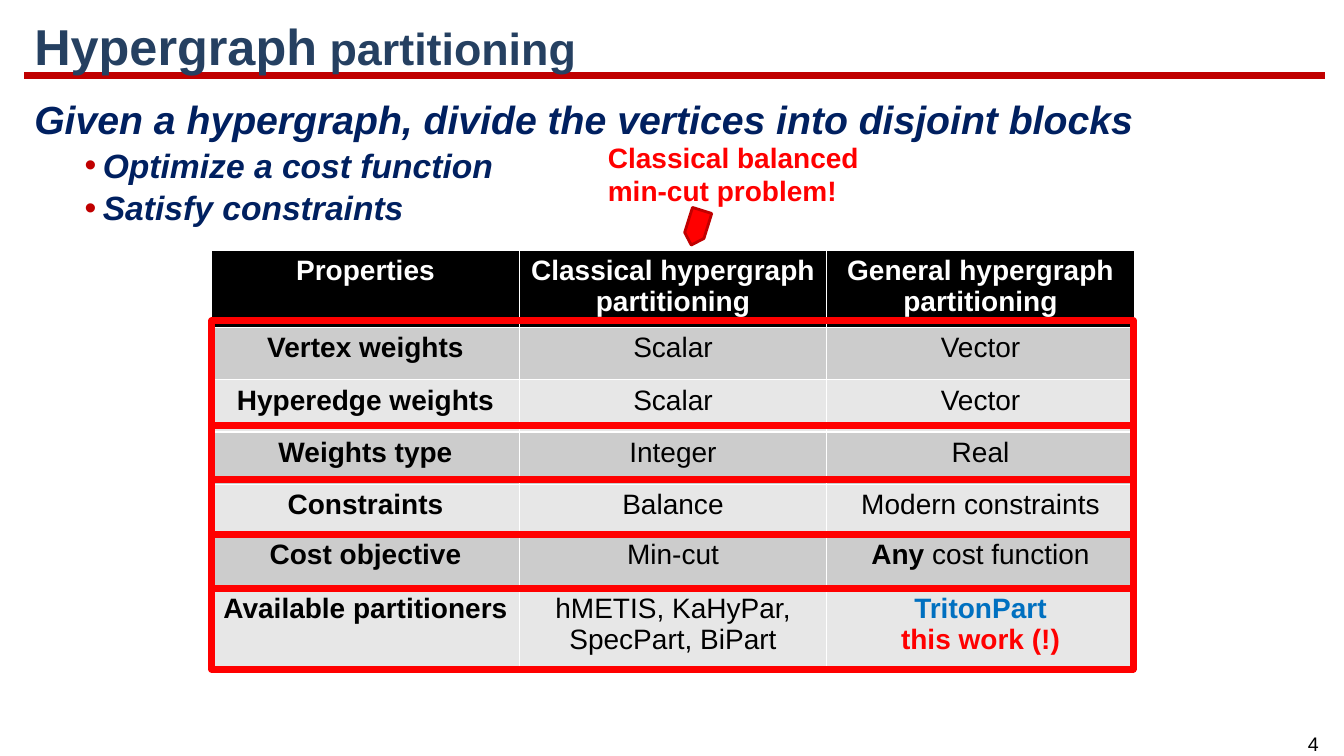
from itertools import accumulate

from lxml.etree import SubElement
from pptx import Presentation
from pptx.dml.color import RGBColor
from pptx.enum.shapes import MSO_CONNECTOR, MSO_SHAPE
from pptx.enum.text import MSO_ANCHOR, MSO_AUTO_SIZE, PP_ALIGN
from pptx.oxml.ns import qn
from pptx.util import Emu, Pt

BLACK = RGBColor(0x00, 0x00, 0x00)
WHITE = RGBColor(0xFF, 0xFF, 0xFF)
RED = RGBColor(0xFF, 0x00, 0x00)
DARK_RED = RGBColor(0xC0, 0x00, 0x00)
NAVY = RGBColor(0x00, 0x20, 0x60)
SLATE = RGBColor(0x25, 0x40, 0x61)
BLUE = RGBColor(0x00, 0x70, 0xC0)
BANDS = (RGBColor(0xE7, 0xE7, 0xE7), RGBColor(0xCC, 0xCC, 0xCC))

TABLE_LEFT, TABLE_TOP, COLUMN_WIDTH = 210, 248, 305
ROW_HEIGHTS = (74, 52, 52, 52, 49, 54, 83)
HIGHLIGHT_TOP, HIGHLIGHT_WIDTH = 318, 914
HIGHLIGHT_HEIGHTS = (104, 54, 54, 54, 80)
HEADERS = ("Properties", "Classical hypergraph partitioning", "General hypergraph partitioning")
PROPERTIES = (
    ("Vertex weights", "Scalar", "Vector"),
    ("Hyperedge weights", "Scalar", "Vector"),
    ("Weights type", "Integer", "Real"),
    ("Constraints", "Balance", "Modern constraints"),
    ("Cost objective", "Min-cut", [[("Any", BLACK, True), (" cost function", BLACK, False)]]),
    ("Available partitioners", "hMETIS, KaHyPar, SpecPart, BiPart",
     [[("TritonPart", BLUE, True)], [("this work (!)", RED, True)]]),
)


def px(length):
    """Turn px, a hundred to the inch, into EMU."""
    return Emu(length * 9144)


class SlideBuilder:
    font_name = "Arial"

    def __init__(self, presentation):
        self.slide = presentation.slides.add_slide(presentation.slide_layouts[1])
        self.shapes = self.slide.shapes

    def place(self, shape, left, top, width, height):
        shape.left, shape.top = px(left), px(top)
        shape.width, shape.height = px(width), px(height)

    def add_run(self, paragraph, text, size, color, bold=False, italic=False):
        run = paragraph.add_run()
        run.text = text
        font = run.font
        font.name, font.size, font.bold, font.italic = self.font_name, Pt(size), bold, italic
        font.color.rgb = color

    def header_rule(self, left, right, y):
        rule = self.shapes.add_connector(
            MSO_CONNECTOR.STRAIGHT, px(left), px(y), px(right), px(y))
        rule.line.color.rgb, rule.line.width = DARK_RED, Pt(4.5)
        element = rule.element
        SubElement(element.spPr, qn("a:effectLst"))
        element.getparent().insert(2, element)  # behind the title

    def title(self, box, runs):
        title = self.shapes.title
        self.place(title, *box)
        frame = title.text_frame
        frame.auto_size, frame.vertical_anchor = MSO_AUTO_SIZE.NONE, MSO_ANCHOR.MIDDLE
        paragraph = frame.paragraphs[0]
        paragraph.alignment, paragraph.line_spacing = PP_ALIGN.LEFT, 0.9
        for text, size in runs:
            self.add_run(paragraph, text, size, SLATE, bold=True)

    def body(self, box, lead, bullets):
        body = self.slide.placeholders[1]
        self.place(body, *box)
        frame = body.text_frame
        frame.auto_size = MSO_AUTO_SIZE.NONE
        paragraph = frame.paragraphs[0]
        self.set_bullet(paragraph, 0, 0, None)
        paragraph.space_before = Pt(0)
        self.add_run(paragraph, lead, 28, NAVY, bold=True, italic=True)
        for text in bullets:
            paragraph = frame.add_paragraph()
            paragraph.level = 1
            self.set_bullet(paragraph, 68, 18, "•")
            paragraph.space_before = Pt(1.5)
            self.add_run(paragraph, text, 24, NAVY, bold=True, italic=True)

    def set_bullet(self, paragraph, margin, hanging, character):
        properties = paragraph._p.get_or_add_pPr()
        properties.set("marL", str(px(margin)))
        properties.set("indent", str(-px(hanging)))
        if character is None:
            SubElement(properties, qn("a:buNone"))
            return
        color = SubElement(properties, qn("a:buClr"))
        SubElement(color, qn("a:srgbClr"), val=str(DARK_RED))
        SubElement(properties, qn("a:buFont"), typeface=self.font_name)
        SubElement(properties, qn("a:buChar"), char=character)

    def text_box(self, box, text, size, color, bold=False, alignment=PP_ALIGN.LEFT):
        frame = self.shapes.add_textbox(*map(px, box)).text_frame
        frame.word_wrap = True
        paragraph = frame.paragraphs[0]
        paragraph.alignment = alignment
        self.add_run(paragraph, text, size, color, bold)

    def table(self, left, top, column_width, row_heights, headers, rows):
        table = self.shapes.add_table(
            len(row_heights), len(headers), px(left), px(top),
            px(column_width * len(headers)), px(sum(row_heights))).table
        for column in table.columns:
            column.width = px(column_width)
        for row, height in zip(table.rows, row_heights):
            row.height = px(height)
        for row_index, contents in enumerate((headers, *rows)):
            is_header = row_index == 0
            for column_index, content in enumerate(contents):
                if isinstance(content, str):
                    bold = is_header or column_index == 0
                    content = [[(content, WHITE if is_header else BLACK, bold)]]
                fill = BLACK if is_header else BANDS[row_index % 2]
                self.fill_cell(table.cell(row_index, column_index), content, fill)

    def fill_cell(self, cell, paragraphs, fill):
        cell.fill.solid()
        cell.fill.fore_color.rgb = fill
        frame = cell.text_frame
        for index, runs in enumerate(paragraphs):
            paragraph = frame.add_paragraph() if index else frame.paragraphs[0]
            paragraph.alignment = PP_ALIGN.CENTER
            for text, color, bold in runs:
                self.add_run(paragraph, text, 20, color, bold)

    def shape(self, kind, box, line, line_width, fill=None, rotation=0):
        shape = self.shapes.add_shape(kind, *map(px, box))
        shape.shadow.inherit = False
        shape.rotation = rotation
        shape.line.color.rgb, shape.line.width = line, Pt(line_width)
        if fill is None:
            shape.fill.background()
        else:
            shape.fill.solid()
            shape.fill.fore_color.rgb = fill


def main():
    presentation = Presentation()
    presentation.slide_width, presentation.slide_height = px(1333), px(750)
    builder = SlideBuilder(presentation)

    builder.header_rule(24, 1314, 75)
    builder.title((24, 16, 968, 65), (("Hypergraph", 36), (" partitioning", 32)))
    builder.body((24, 90, 1300, 140),
                 "Given a hypergraph, divide the vertices into disjoint blocks",
                 ("Optimize a cost function", "Satisfy constraints"))
    builder.text_box((1273, 721, 59, 29), "4", 14, BLACK, alignment=PP_ALIGN.CENTER)

    builder.table(TABLE_LEFT, TABLE_TOP, COLUMN_WIDTH, ROW_HEIGHTS, HEADERS, PROPERTIES)
    highlight_tops = accumulate(HIGHLIGHT_HEIGHTS, initial=HIGHLIGHT_TOP)
    for top, height in zip(highlight_tops, HIGHLIGHT_HEIGHTS):
        builder.shape(MSO_SHAPE.RECTANGLE, (TABLE_LEFT, top, HIGHLIGHT_WIDTH, height), RED, 4.75)

    builder.text_box((593, 134, 318, 77), "Classical balanced min-cut problem!", 20, RED, bold=True)
    builder.shape(MSO_SHAPE.PENTAGON, (673, 216, 36, 20), DARK_RED, 2, fill=RED, rotation=107.4)

    presentation.save("out.pptx")


if __name__ == "__main__":
    main()
